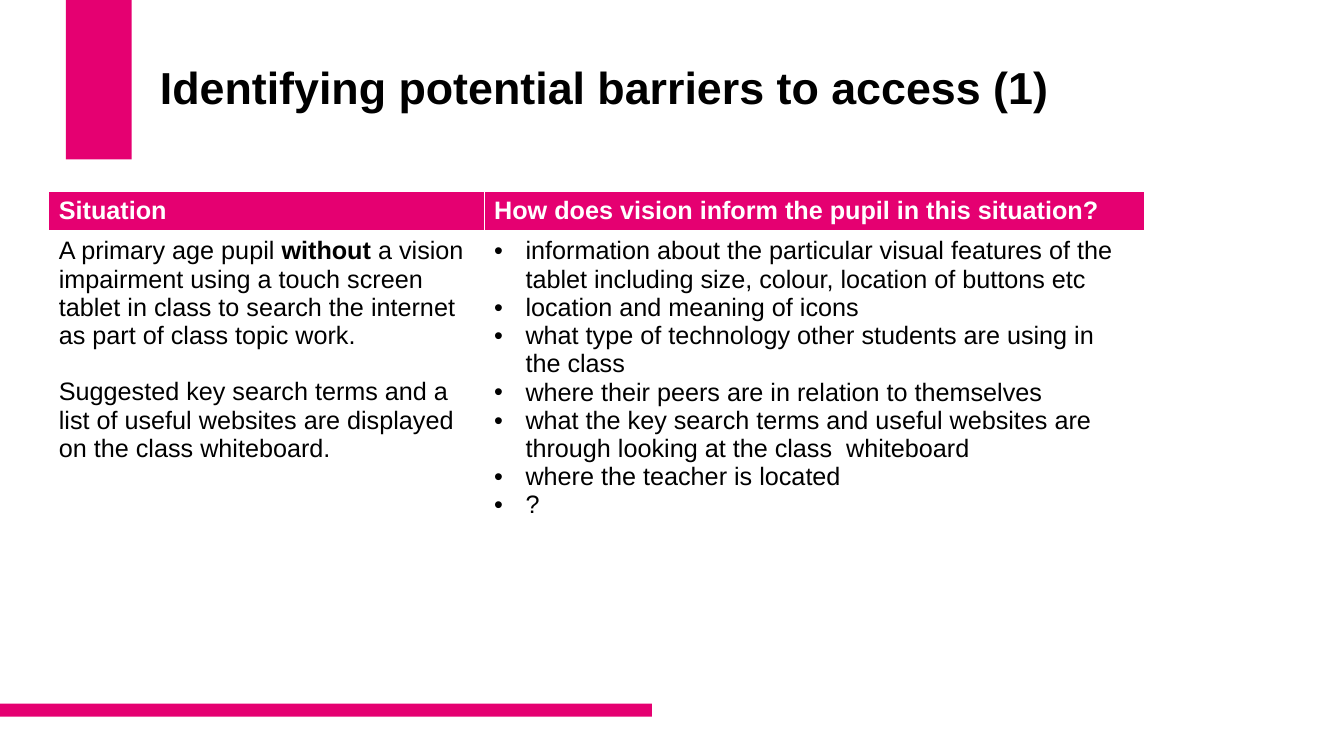
from lxml.etree import SubElement
from pptx import Presentation
from pptx.dml.color import RGBColor
from pptx.enum.shapes import MSO_SHAPE
from pptx.enum.text import MSO_ANCHOR
from pptx.oxml.ns import qn
from pptx.util import Cm, Pt

PINK = RGBColor(0xE5, 0x00, 0x71)
WHITE = RGBColor(0xFF, 0xFF, 0xFF)
BLACK = RGBColor(0x00, 0x00, 0x00)

# Content: a paragraph is a list of (text, bold) spans
TITLE = "Identifying potential barriers to access (1)"
HEADINGS = ["Situation", "How does vision inform the pupil in this situation?"]
SITUATION = [
    [("A primary age pupil ", False), ("without ", True),
     ("a vision impairment using a touch screen tablet in class to search "
      "the internet as part of class topic work.", False)],
    [("Suggested key search terms and a list of useful websites are "
      "displayed on the class whiteboard.", False)],
]
VISION_INFORMS = [
    "information about the particular visual features of the tablet "
    "including size, colour, location of buttons etc",
    "location and meaning of icons",
    "what type of technology other students are using in the class",
    "where their peers are in relation to themselves",
    "what the key search terms and useful websites are through looking "
    "at the class  whiteboard",
    "where the teacher is located",
    "?",
]

# Layout in centimetres: left, top, width, height
BARS = [(1.66, 0, 1.66, 4.02), (0, 17.73, 16.43, 0.33)]
TITLE_BOX = (3.78, 1.02, 24.38, 3.68)
TABLE_BOX = (1.23, 4.83, 27.61, 10.69)
COLUMN_WIDTHS = [10.97, 16.64]
ROW_HEIGHTS = [0.91, 9.78]
BULLET_INDENT = Cm(0.79)


def write(frame, paragraphs, size=18, color=BLACK, bullet=None, gap=0, line=None):
    for index, spans in enumerate(paragraphs):
        para = frame.paragraphs[0] if index == 0 else frame.add_paragraph()
        if bullet:
            props = para._p.get_or_add_pPr()
            props.set("marL", str(BULLET_INDENT))
            props.set("indent", str(-BULLET_INDENT))
            SubElement(props, qn("a:buFont"), typeface="Arial")
            SubElement(props, qn("a:buChar"), char=bullet)
        if index and gap:
            para.space_before = Pt(gap)
        if line:
            para.line_spacing = line
        for text, bold in spans:
            span = para.add_run()
            span.text = text
            span.font.name = "Arial"
            span.font.size = Pt(size)
            span.font.bold = bold
            span.font.color.rgb = color


def style_cell(cell, fill, top, bottom):
    props = cell._tc.get_or_add_tcPr()
    for side, width in (("L", 1), ("R", 1), ("T", top), ("B", bottom)):
        border = SubElement(props, qn(f"a:ln{side}"), w=str(Pt(width)))
        paint = SubElement(border, qn("a:solidFill"))
        SubElement(paint, qn("a:srgbClr"), val=str(WHITE))
    cell.fill.solid()
    cell.fill.fore_color.rgb = fill


def main():
    deck = Presentation()
    deck.slide_width, deck.slide_height = Cm(33.87), Cm(19.05)
    page = deck.slides.add_slide(deck.slide_layouts[6])

    # Accent bars
    for bounds in BARS:
        bar = page.shapes.add_shape(MSO_SHAPE.RECTANGLE, *map(Cm, bounds))
        bar.shadow.inherit = False
        bar.fill.solid()
        bar.fill.fore_color.rgb = PINK
        bar.line.fill.background()

    # Title, raised above the middle by a deep bottom inset
    frame = page.shapes.add_textbox(*map(Cm, TITLE_BOX)).text_frame
    frame.word_wrap = True
    frame.vertical_anchor = MSO_ANCHOR.MIDDLE
    frame.margin_bottom = Cm(1.3)
    write(frame, [[(TITLE, True)]], size=32, line=0.9)

    # Table
    table = page.shapes.add_table(2, 2, *map(Cm, TABLE_BOX)).table
    for column, width in zip(table.columns, COLUMN_WIDTHS):
        column.width = Cm(width)
    for row, height in zip(table.rows, ROW_HEIGHTS):
        row.height = Cm(height)
    for index, heading in enumerate(HEADINGS):
        style_cell(table.cell(0, index), PINK, top=1, bottom=3)
        style_cell(table.cell(1, index), WHITE, top=3, bottom=1)
        write(table.cell(0, index).text_frame, [[(heading, True)]], color=WHITE)
    write(table.cell(1, 0).text_frame, SITUATION, gap=20)
    write(table.cell(1, 1).text_frame,
          [[(text, False)] for text in VISION_INFORMS], bullet="•")

    deck.save("out.pptx")


if __name__ == "__main__":
    main()
